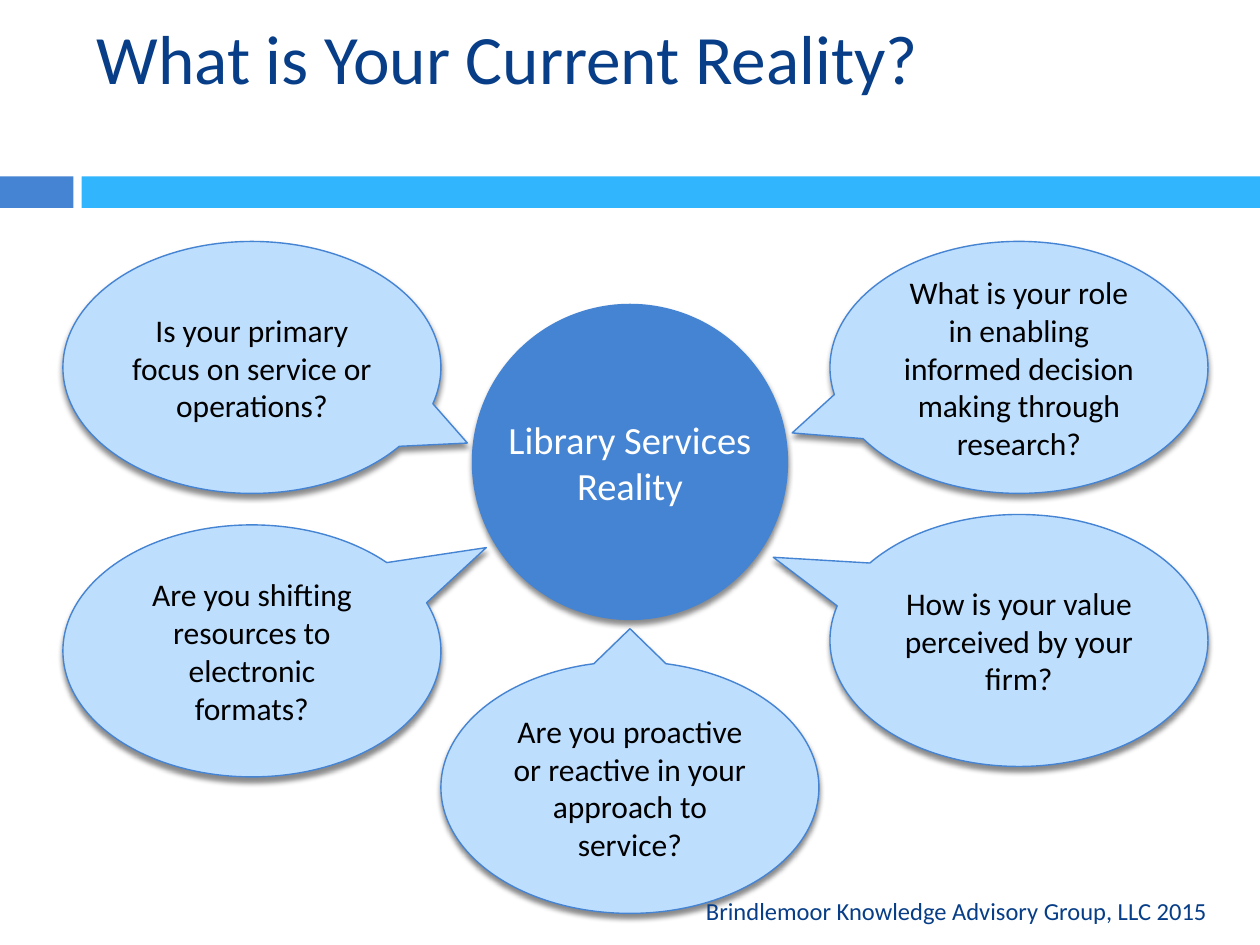
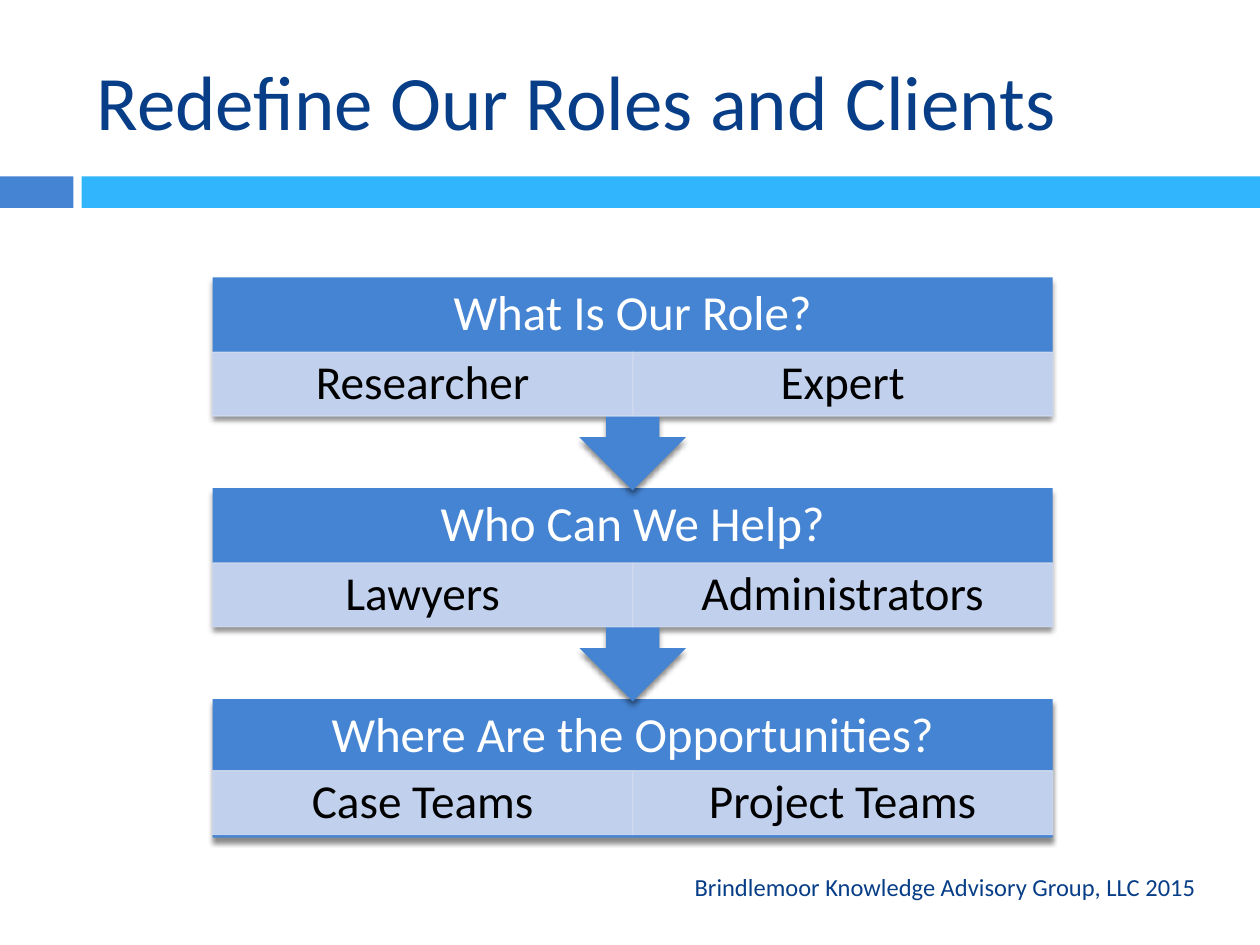
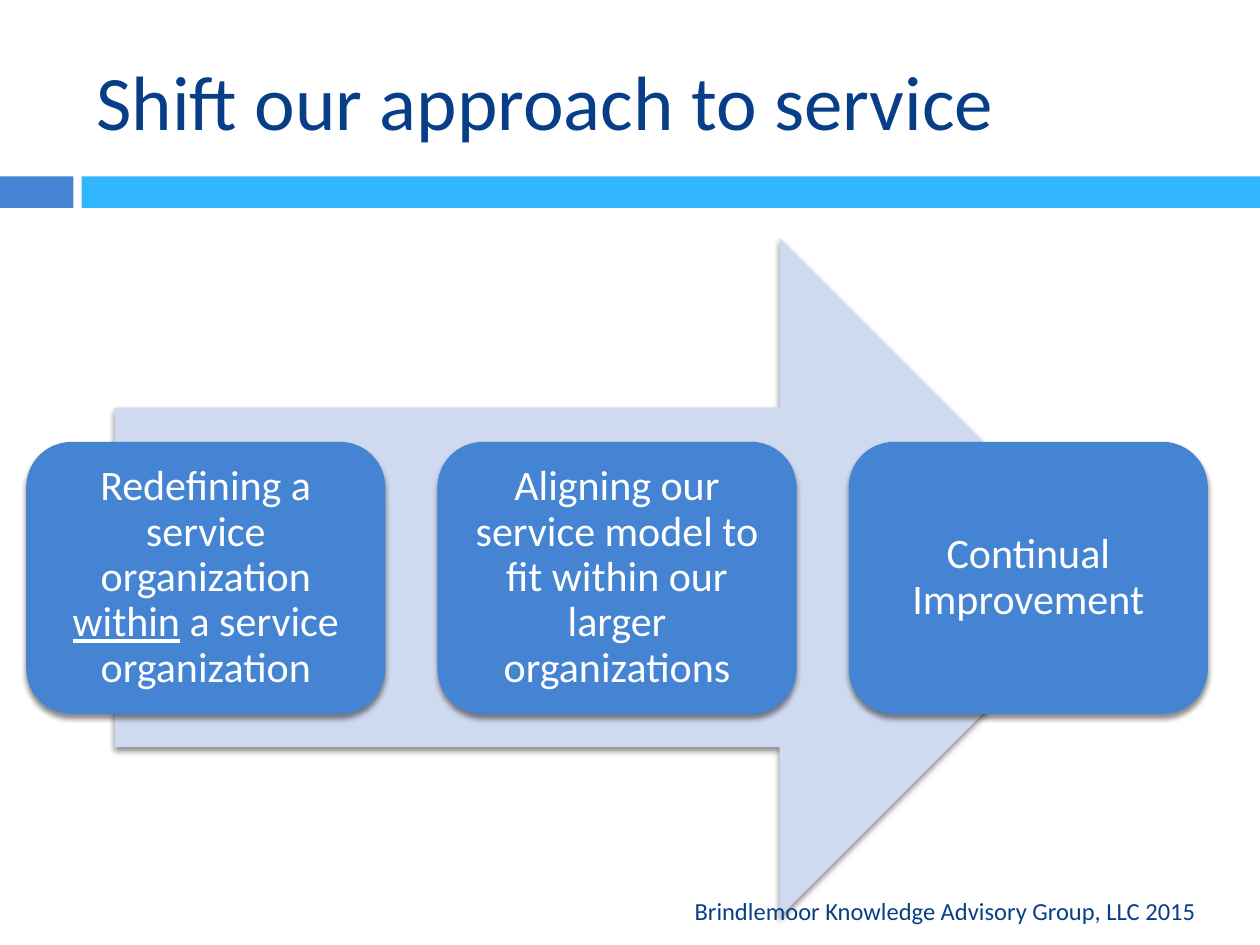
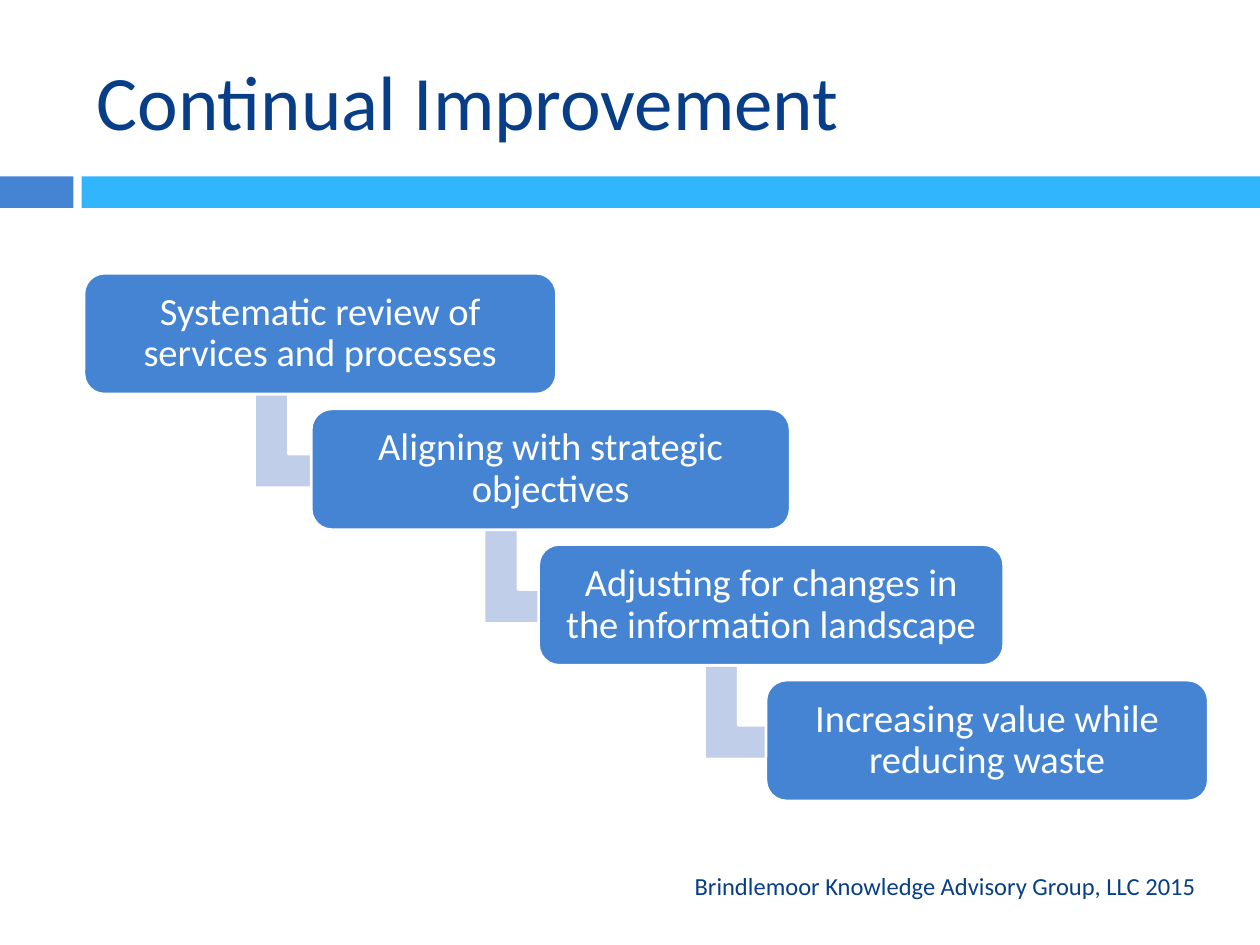
from lxml.etree import SubElement
from pptx import Presentation
from pptx.dml.color import RGBColor
from pptx.enum.shapes import MSO_SHAPE as Preset
from pptx.enum.text import MSO_ANCHOR as Anchor, MSO_AUTO_SIZE as AutoSize, PP_ALIGN as Align
from pptx.oxml.ns import qn
from pptx.util import Pt

COLORS = {
    "title": "073E87",
    "blue": "4584D3",
    "sky": "31B6FD",
    "bubble": "BEDEFE",
    "pale": "CFD9EF",
    "elbow": "C1CEEA",
    "white": "FFFFFF",
    "black": "000000",
}
FONT = "Calibri"
FOOTER = "Brindlemoor Knowledge Advisory Group, LLC 2015"


def rgb(name):
    """Return the named colour."""
    return RGBColor.from_string(COLORS[name])


def write_text(frame, text, size=18, color="black", align=Align.CENTER, anchor=Anchor.MIDDLE,
               spacing=None, margins=(7.2, 3.6), wrap=True, underline=None):
    """Fill a text frame, one paragraph per line of text."""
    frame.auto_size = AutoSize.NONE
    frame.word_wrap = wrap
    frame.vertical_anchor = anchor
    frame.margin_left = frame.margin_right = Pt(margins[0])
    frame.margin_top = frame.margin_bottom = Pt(margins[1])
    for index, line in enumerate(text.split("\n")):
        paragraph = frame.paragraphs[0] if index == 0 else frame.add_paragraph()
        paragraph.alignment = align
        paragraph.line_spacing = spacing
        for part in line.partition(underline) if underline else (line,):
            run = paragraph.add_run()
            run.text = part
            run.font.name = FONT
            run.font.size = Pt(size)
            run.font.color.rgb = rgb(color)
            if part == underline:
                run.font.underline = True


class Deck:
    """Holds the shared style and the current slide."""

    def __init__(self):
        """Start a presentation whose title layout carries the bands."""
        self.presentation = Presentation()
        self.presentation.slide_width = Pt(720)
        self.presentation.slide_height = Pt(540)
        self.layout = self.presentation.slide_layouts[5]
        self.slide = None

    def add_slide(self, title, size=44, top=18, height=78, anchor=Anchor.MIDDLE):
        """Add a slide with its title."""
        self.slide = self.presentation.slides.add_slide(self.layout)
        if len(self.presentation.slides) == 1:
            self.add_bands()
        holder = self.slide.shapes.title
        holder.left, holder.top, holder.width, holder.height = map(Pt, (48, top, 642, height))
        write_text(holder.text_frame, title, size=size, color="title", align=Align.LEFT, anchor=anchor)

    def add_bands(self):
        """Draw the two bands and hand them to the layout."""
        for left, width, color in ((0, 42, "blue"), (46.6, 673.4, "sky")):
            band = self.add_shape(Preset.RECTANGLE, (left, 100.8, width, 18), color)
            self.layout.shapes.element.insert(2, band.element)

    def add_shape(self, preset, box, fill, line=None, line_width=0.79, adjust=(), rotation=0,
                  alpha=None, shadow=False, text=None, **text_format):
        """Add a preset shape with optional text."""
        shape = self.slide.shapes.add_shape(preset, *map(Pt, box))
        shape.rotation = rotation
        for index, value in enumerate(adjust):
            shape.adjustments[index] = value
        shape.fill.solid()
        shape.fill.fore_color.rgb = rgb(fill)
        if line:
            shape.line.color.rgb = rgb(line)
            shape.line.width = Pt(line_width)
        else:
            shape.line.fill.background()
        properties = shape.element.spPr
        if alpha:
            for color in properties.iter(qn("a:srgbClr")):
                SubElement(color, qn("a:alpha"), val=str(alpha * 1000))
        shape.shadow.inherit = False
        if shadow:
            self.add_shadow(properties.find(qn("a:effectLst")))
        if text:
            write_text(shape.text_frame, text, **text_format)
        return shape

    def add_shadow(self, effects):
        """Add the soft shadow below a shape."""
        outer = SubElement(effects, qn("a:outerShdw"), blurRad=str(Pt(3)), dist=str(Pt(2.4)),
                           dir="5400000", rotWithShape="0")
        color = SubElement(outer, qn("a:srgbClr"), val=COLORS["black"])
        SubElement(color, qn("a:alpha"), val="45000")

    def add_text(self, text, box, **text_format):
        """Add a text box."""
        text_box = self.slide.shapes.add_textbox(*map(Pt, box))
        write_text(text_box.text_frame, text, **text_format)

    def add_footer(self, top, left=263.5):
        """Add the footer line."""
        self.add_text(FOOTER, (left, top, 427, 28.8), size=14, color="title", align=Align.RIGHT)


def build_reality(deck):
    """Questions around the library circle."""
    deck.add_slide("What is Your Current Reality?", size=39.6, top=5, height=91, anchor=Anchor.TOP)
    deck.add_shape(Preset.OVAL, (270, 174, 180, 180), "blue", line="blue", shadow=True,
                   text="Library Services\nReality", size=22, color="white",
                   margins=(3.6, 3.6), wrap=False)
    questions = (
        ("Is your primary focus on service or operations?", 36, 138, (0.57, 0.3)),
        ("Are you proactive or reactive in your approach to service?", 252, 378, (0, -0.63)),
        ("Are you shifting resources to electronic formats?", 36, 300, (0.62, -0.41)),
        ("What is your role in enabling informed decision making through research?",
         474.3, 138, (-0.6, 0.26)),
        ("How is your value perceived by your firm?", 474.3, 294, (-0.65, -0.33)),
    )
    for question, left, top, pointer in questions:
        deck.add_shape(Preset.OVAL_CALLOUT, (left, top, 216, 144), "bubble", line="blue",
                       adjust=pointer, shadow=True, text=question)
    deck.add_footer(506.2, left=270)


def build_roles(deck):
    """Three headed steps, drawn from the last so each arrow overlaps the next."""
    deck.add_slide("Redefine Our Roles and Clients")
    left, width, first_top, pitch = 121.5, 480, 158.5, 120.5
    steps = (
        ("What Is Our Role?", ("Researcher", "Expert")),
        ("Who Can We Help?", ("Lawyers", "Administrators")),
        ("Where Are the Opportunities?", ("Case Teams", "Project Teams")),
    )
    for index, (heading, details) in reversed(list(enumerate(steps))):
        top = first_top + index * pitch
        if index == len(steps) - 1:
            detail_top = top + 41
            deck.add_shape(Preset.RECTANGLE, (left, top, width, 79.2), "blue", shadow=True)
        else:
            detail_top = top + 42.8
            deck.add_shape(Preset.UP_ARROW_CALLOUT, (left, top, width, 121.8), "blue",
                           rotation=180, shadow=True)
        deck.add_text(heading, (left, top, width, 42.5), size=28, color="white",
                      spacing=0.9, margins=(15.8, 2.9))
        for column, detail in enumerate(details):
            deck.add_shape(Preset.RECTANGLE, (left + column * width / 2, detail_top, width / 2, 36.4),
                           "pale", line="pale", alpha=90, text=detail, size=27,
                           spacing=0.9, margins=(15.1, 2.9))
    deck.add_footer(492.5)


def build_shift(deck):
    """Three stages along a broad arrow."""
    deck.add_slide("Shift our approach to service")
    deck.add_shape(Preset.RIGHT_ARROW, (65.5, 136, 574, 388), "pale", shadow=True)
    stages = (
        ("Redefining a service organization within a service organization", "within"),
        ("Aligning our service model to fit within our larger organizations", None),
        ("Continual Improvement", None),
    )
    for index, (stage, underline) in enumerate(stages):
        deck.add_shape(Preset.ROUNDED_RECTANGLE, (15 + index * 235, 252.5, 205.2, 155.5), "blue",
                       shadow=True, text=stage, size=24, color="white", spacing=0.9,
                       margins=(7.2, 7.2), underline=underline)
    deck.add_footer(506.2)


def build_improvement(deck):
    """Four stairs joined by elbow arrows."""
    deck.add_slide("Continual Improvement")
    stairs = (
        ("Systematic review of services and processes", 270, 101.8),
        ("Aligning with strategic objectives", 273.6, 103),
        ("Adjusting for changes in the information landscape", 265.7, 99),
        ("Increasing value while reducing waste", 252.7, None),
    )
    for index, (stair, width, elbow_offset) in enumerate(stairs):
        left, top = 48 + index * 129.9, 156.2 + index * 77.5
        if elbow_offset:
            deck.add_shape(Preset.BENT_UP_ARROW, (left + elbow_offset, top + 64.8, 58.5, 67),
                           "elbow", line="white", line_width=1.5, rotation=90,
                           adjust=(0.33, 0.25, 0.36))
        deck.add_shape(Preset.ROUNDED_RECTANGLE, (left, top, width, 69), "blue", line="white",
                       line_width=1.5, adjust=(0.17,), text=stair, size=22, color="white",
                       spacing=0.9, margins=(6.5, 6.5))
    deck.add_footer(491.8)


def main():
    """Build and save the deck."""
    deck = Deck()
    for build in (build_reality, build_roles, build_shift, build_improvement):
        build(deck)
    deck.presentation.save("out.pptx")


if __name__ == "__main__":
    main()
